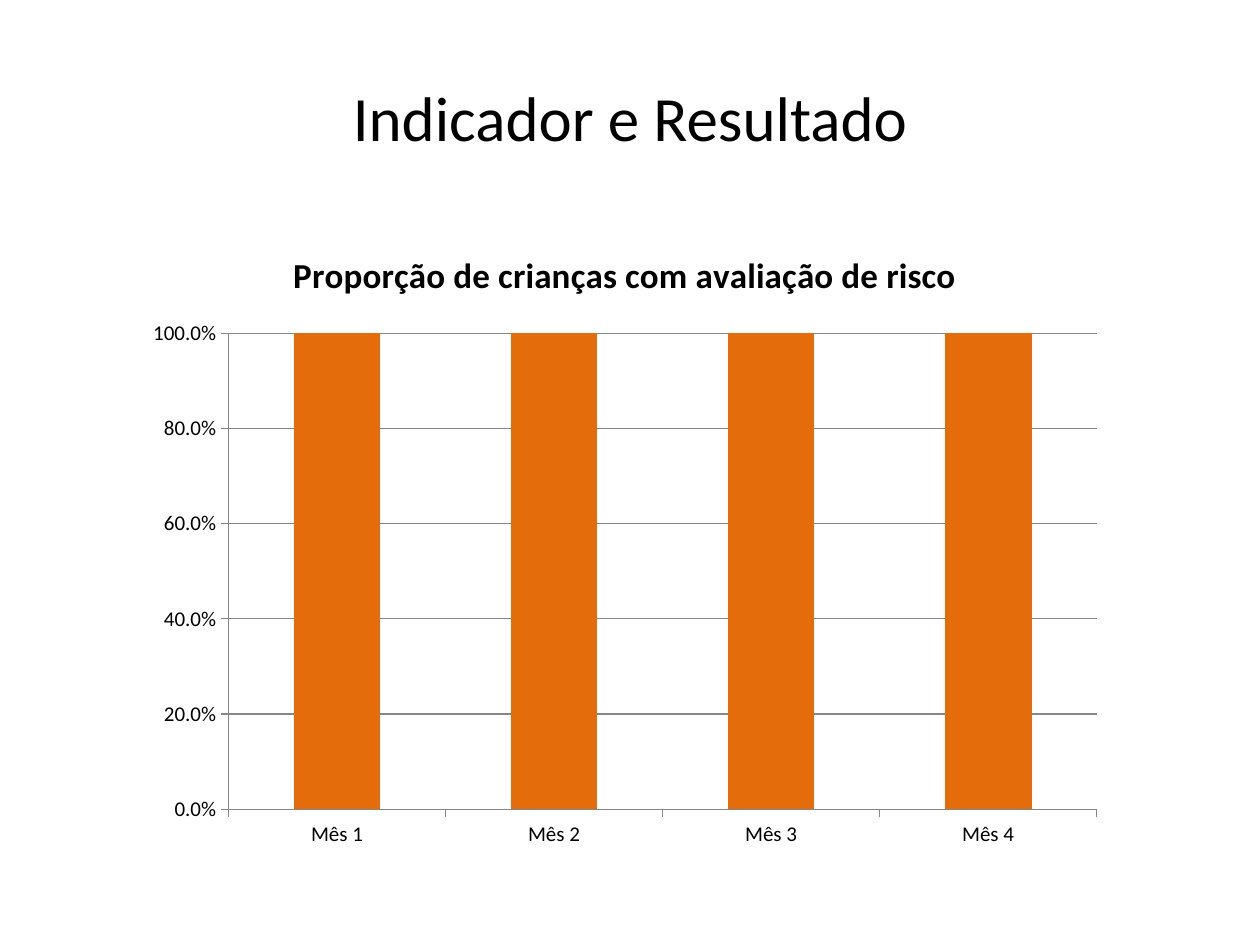
import pptx
import pptx.util
import pptx.chart.data
import pptx.dml.color
import pptx.enum.chart
import pptx.enum.text

Inches = pptx.util.Inches
BLACK = pptx.dml.color.RGBColor(0x00, 0x00, 0x00)
ORANGE = pptx.dml.color.RGBColor(0xE4, 0x6C, 0x0A)
GRAY = pptx.dml.color.RGBColor(0x86, 0x86, 0x86)
FACE = "Calibri"
TOPIC = "Proporção de crianças com avaliação de risco"


def style(font, size, bold=False):
    font.name = FACE
    font.size = pptx.util.Pt(size)
    font.bold = bold
    font.color.rgb = BLACK


deck = pptx.Presentation()
deck.slide_width = Inches(10)
deck.slide_height = Inches(7.5)
slide = deck.slides.add_slide(deck.slide_layouts[5])

title = slide.shapes.title
title.left, title.top = Inches(0.5), Inches(0.3)
title.width, title.height = Inches(9), Inches(1.25)
frame = title.text_frame
frame.vertical_anchor = pptx.enum.text.MSO_ANCHOR.MIDDLE
para = frame.paragraphs[0]
para.alignment = pptx.enum.text.PP_ALIGN.CENTER
run = para.add_run()
run.text = "Indicador e Resultado"
style(run.font, 36)

data = pptx.chart.data.CategoryChartData(number_format="0.0%")
data.categories = [f"Mês {month}" for month in range(1, 5)]
data.add_series(TOPIC, [1, 1, 1, 1])
chart = slide.shapes.add_chart(
    pptx.enum.chart.XL_CHART_TYPE.COLUMN_CLUSTERED,
    Inches(1.06), Inches(1.78), Inches(7.8), Inches(5.04), data,
).chart
style(chart.font, 10)
chart.has_legend = False
chart.has_title = True
head = chart.chart_title.text_frame.paragraphs[0].add_run()
head.text = TOPIC
style(head.font, 20, True)
chart.chart_title.include_in_layout = False

plot = chart.plots[0]
plot.gap_width = 150
plot.vary_by_categories = False
fill = plot.series[0].format.fill
fill.solid()
fill.fore_color.rgb = ORANGE

scale = chart.value_axis
scale.minimum_scale = 0
scale.maximum_scale = 1
scale.major_unit = 0.2
scale.has_major_gridlines = True
scale.tick_labels.number_format = "0.0%"
scale.tick_labels.number_format_is_linked = False

for axis in (chart.category_axis, scale):
    axis.major_tick_mark = pptx.enum.chart.XL_TICK_MARK.OUTSIDE
    axis.minor_tick_mark = pptx.enum.chart.XL_TICK_MARK.NONE
    style(axis.tick_labels.font, 12)

for part in (chart.category_axis, scale, scale.major_gridlines):
    part.format.line.color.rgb = GRAY
    part.format.line.width = pptx.util.Pt(0.75)

deck.save("out.pptx")
